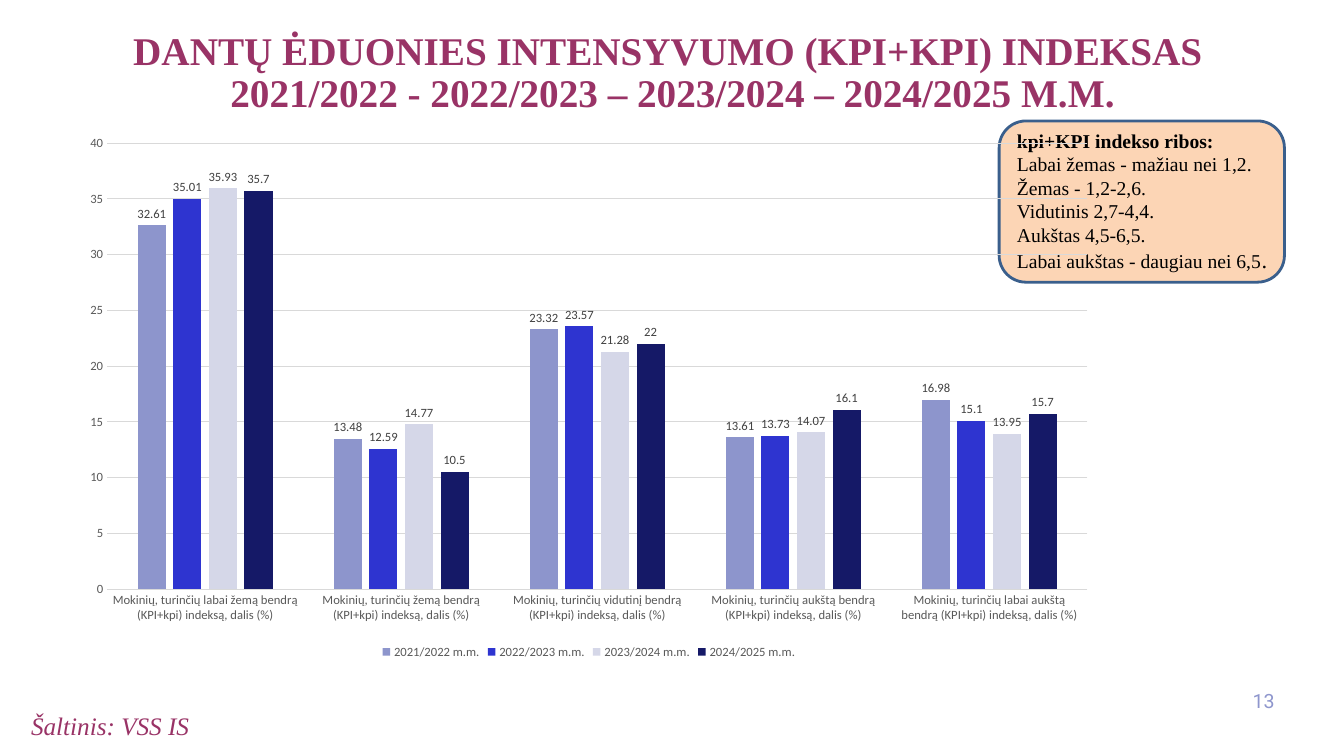
"""Build the slide on the dental caries intensity index by school year."""
from pptx import Presentation
from pptx.chart.data import CategoryChartData
from pptx.dml.color import RGBColor
from pptx.enum.chart import XL_CHART_TYPE, XL_LABEL_POSITION, XL_LEGEND_POSITION, XL_TICK_MARK
from pptx.enum.shapes import MSO_SHAPE
from pptx.enum.text import MSO_ANCHOR, MSO_AUTO_SIZE, PP_ALIGN
from pptx.util import Inches, Pt

PLUM = RGBColor(0x99, 0x33, 0x66)
PERIWINKLE = RGBColor(0x8E, 0x96, 0xCD)
PEACH = RGBColor(0xFC, 0xD5, 0xB5)
STEEL = RGBColor(0x3A, 0x5F, 0x8C)
BLACK = RGBColor(0x00, 0x00, 0x00)
LABEL_GREY = RGBColor(0x40, 0x40, 0x40)
AXIS_GREY = RGBColor(0x59, 0x59, 0x59)
GRID_GREY = RGBColor(0xD9, 0xD9, 0xD9)

SERIF = "Times New Roman"

TITLE = ("DANTŲ ĖDUONIES INTENSYVUMO (KPI+KPI) INDEKSAS \v"
         "2021/2022 - 2022/2023 – 2023/2024 – 2024/2025 M.M.")
INDEX_LIMITS = [
    "kpi+KPI indekso ribos:",
    "Labai žemas - mažiau nei 1,2.",
    "Žemas - 1,2-2,6.",
    "Vidutinis 2,7-4,4.",
    "Aukštas 4,5-6,5.",
    "Labai aukštas - daugiau nei 6,5",
]
LEVELS = ["labai žemą", "žemą", "vidutinį", "aukštą", "labai aukštą"]
CATEGORIES = [f"Mokinių, turinčių {level} bendrą (KPI+kpi) indeksą, dalis (%)" for level in LEVELS]
SCHOOL_YEARS = [
    ("2021/2022 m.m.", RGBColor(0x8D, 0x95, 0xCC), (32.61, 13.48, 23.32, 13.61, 16.98)),
    ("2022/2023 m.m.", RGBColor(0x2E, 0x34, 0xD0), (35.01, 12.59, 23.57, 13.73, 15.1)),
    ("2023/2024 m.m.", RGBColor(0xD5, 0xD7, 0xE8), (35.93, 14.77, 21.28, 14.07, 13.95)),
    ("2024/2025 m.m.", RGBColor(0x15, 0x19, 0x67), (35.7, 10.5, 22, 16.1, 15.7)),
]


class SlideBuilder:
    def __init__(self, slide):
        self.slide = slide

    def style(self, font, size, color, name, bold=False, italic=False):
        font.size = Pt(size)
        font.color.rgb = color
        font.name = name
        font.bold = bold
        font.italic = italic

    def title(self, text, left, top, width, height):
        shape = self.slide.shapes.title
        shape.left, shape.top = Inches(left), Inches(top)
        shape.width, shape.height = Inches(width), Inches(height)
        frame = shape.text_frame
        frame.text = text
        frame.auto_size = MSO_AUTO_SIZE.NONE
        frame.vertical_anchor = MSO_ANCHOR.BOTTOM
        paragraph = frame.paragraphs[0]
        paragraph.alignment = PP_ALIGN.CENTER
        paragraph.line_spacing = 0.9
        for run in paragraph.runs:
            self.style(run.font, 28, PLUM, SERIF, bold=True)

    def text(self, text, left, top, width, height, size, color, name,
             italic=False, align=PP_ALIGN.LEFT):
        box = self.slide.shapes.add_textbox(
            Inches(left), Inches(top), Inches(width), Inches(height))
        frame = box.text_frame
        frame.word_wrap = True
        frame.text = text
        frame.paragraphs[0].alignment = align
        self.style(frame.paragraphs[0].runs[0].font, size, color, name, italic=italic)

    def callout(self, lines, left, top, width, height):
        shape = self.slide.shapes.add_shape(
            MSO_SHAPE.ROUNDED_RECTANGLE,
            Inches(left), Inches(top), Inches(width), Inches(height))
        shape.shadow.inherit = False
        shape.fill.solid()
        shape.fill.fore_color.rgb = PEACH
        shape.line.color.rgb = STEEL
        shape.line.width = Pt(2)
        frame = shape.text_frame
        frame.word_wrap = True
        frame.vertical_anchor = MSO_ANCHOR.TOP
        frame.margin_top = frame.margin_bottom = Inches(0)
        frame.margin_right = Inches(0.05)
        frame.text = "\n".join(lines)
        for index, paragraph in enumerate(frame.paragraphs):
            paragraph.alignment = PP_ALIGN.LEFT
            self.style(paragraph.runs[0].font, 14, BLACK, SERIF, bold=index == 0)
        full_stop = frame.paragraphs[-1].add_run()
        full_stop.text = "."
        self.style(full_stop.font, 16, BLACK, SERIF)

    def column_chart(self, categories, series_rows, left, top, width, height):
        data = CategoryChartData()
        data.categories = categories
        for name, _, values in series_rows:
            data.add_series(name, values)
        chart = self.slide.shapes.add_chart(
            XL_CHART_TYPE.COLUMN_CLUSTERED,
            Inches(left), Inches(top), Inches(width), Inches(height), data).chart
        self.style(chart.font, 10, BLACK, "Calibri")
        chart.has_title = False
        chart.has_legend = True
        chart.legend.position = XL_LEGEND_POSITION.BOTTOM
        chart.legend.include_in_layout = False
        self.style(chart.legend.font, 9, AXIS_GREY, "Calibri")
        self.axes(chart)
        plot = chart.plots[0]
        plot.vary_by_categories = False
        plot.gap_width = 219
        plot.overlap = -27
        for series, (_, color, _) in zip(plot.series, series_rows):
            series.format.fill.solid()
            series.format.fill.fore_color.rgb = color
            series.invert_if_negative = False
            labels = series.data_labels
            labels.show_value = True
            labels.position = XL_LABEL_POSITION.OUTSIDE_END
            self.style(labels.font, 9, LABEL_GREY, "Calibri")

    def axes(self, chart):
        for axis in (chart.category_axis, chart.value_axis):
            axis.major_tick_mark = axis.minor_tick_mark = XL_TICK_MARK.NONE
            self.style(axis.tick_labels.font, 9, AXIS_GREY, "Calibri")
        value_axis = chart.value_axis
        value_axis.minimum_scale = 0
        value_axis.maximum_scale = 40
        value_axis.major_unit = 5
        value_axis.format.line.fill.background()
        for line in (chart.category_axis.format.line, value_axis.major_gridlines.format.line):
            line.color.rgb = GRID_GREY
            line.width = Pt(0.75)


def main():
    presentation = Presentation()
    presentation.slide_width = Inches(13.33)
    presentation.slide_height = Inches(7.5)
    title_only = presentation.slide_layouts.get_by_name("Title Only")
    builder = SlideBuilder(presentation.slides.add_slide(title_only))
    builder.title(TITLE, 0.21, 0.58, 12.92, 0.62)
    builder.text("Šaltinis: VSS IS", 0.21, 7, 6.3, 0.38, 18, PLUM, SERIF, italic=True)
    builder.text("13", 12.22, 6.79, 0.52, 0.4, 14, PERIWINKLE, "Roboto", align=PP_ALIGN.RIGHT)
    builder.callout(INDEX_LIMITS, 9.91, 1.2, 2.83, 1.6)
    builder.column_chart(CATEGORIES, SCHOOL_YEARS, 0.69, 1.24, 10.3, 5.34)
    presentation.save("out.pptx")


if __name__ == "__main__":
    main()
